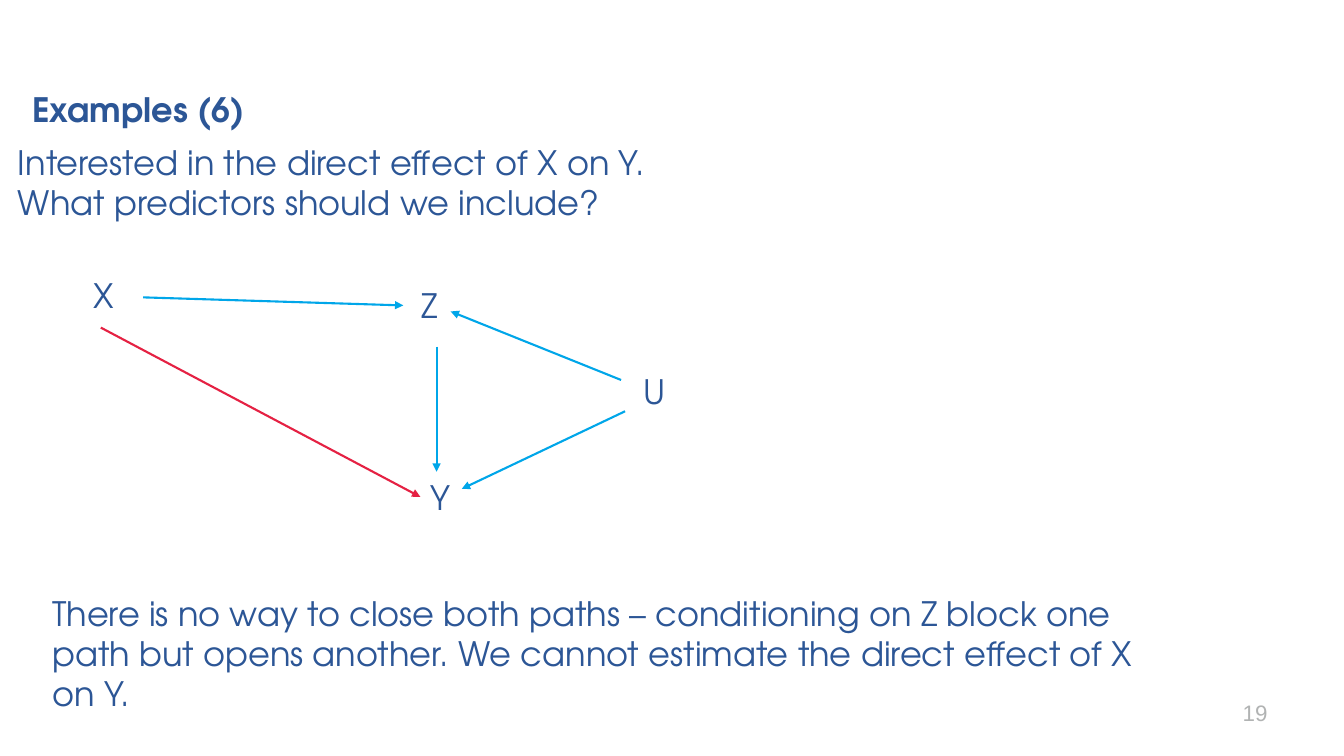
"""Build the slide on the direct effect of X on Y with a causal diagram."""
import lxml.etree
import pptx
import pptx.dml.color
import pptx.enum.shapes
import pptx.enum.text
import pptx.oxml.ns
import pptx.util

NAVY = pptx.dml.color.RGBColor(0x2C, 0x56, 0x96)
BLUE = pptx.dml.color.RGBColor(0x00, 0xA6, 0xE9)
RED = pptx.dml.color.RGBColor(0xE5, 0x21, 0x43)
GREY = pptx.dml.color.RGBColor(0xB1, 0xB3, 0xB3)

TITLE = "Examples (6)"
QUESTION = [
    "Interested in the direct effect of X on Y.",
    "What predictors should we include?",
]
CONCLUSION = (
    "There is no way to close both paths – conditioning on Z block one path "
    "but opens another. We cannot estimate the direct effect of X on Y."
)
PAGE_NUMBER = "19"
NODES = {
    "X": (83, 268, 317, 50),
    "Z": (408, 278, 232, 50),
    "Y": (417, 468, 232, 50),
    "U": (628, 363, 301, 50),
}
ARROWS = [
    ((142, 295), (400, 303), BLUE),
    ((433, 344), (433, 468), BLUE),
    ((100, 325), (417, 493), RED),
    ((616, 377), (447, 309), BLUE),
    ((620, 408), (458, 485), BLUE),
]
EMU_PER_PX = 9144


def px(*lengths):
    return [pptx.util.Emu(length * EMU_PER_PX) for length in lengths]


def add_text(slide, paragraphs, box, size=24, font="TeX Gyre Adventor", color=NAVY,
             bold=False, align=pptx.enum.text.PP_ALIGN.LEFT,
             anchor=pptx.enum.text.MSO_ANCHOR.TOP):
    frame = slide.shapes.add_textbox(*px(*box)).text_frame
    frame.word_wrap = True
    frame.vertical_anchor = anchor
    frame.text = "\n".join(paragraphs)
    for paragraph in frame.paragraphs:
        paragraph.alignment = align
        for run in paragraph.runs:
            run.font.name = font
            run.font.size = pptx.util.Pt(size)
            run.font.bold = bold
            run.font.color.rgb = color


def add_arrow(slide, start, end, color):
    connector = slide.shapes.add_connector(
        pptx.enum.shapes.MSO_CONNECTOR.STRAIGHT, *px(*start, *end))
    connector.line.color.rgb = color
    connector.line.width = pptx.util.Pt(1.5)
    qn = pptx.oxml.ns.qn
    properties = connector.element.spPr
    lxml.etree.SubElement(properties.find(qn("a:ln")), qn("a:tailEnd"), type="triangle")
    lxml.etree.SubElement(properties, qn("a:effectLst"))


def main():
    presentation = pptx.Presentation()
    presentation.slide_width, presentation.slide_height = px(1333, 750)
    slide = presentation.slides.add_slide(presentation.slide_layouts[6])

    add_text(slide, [PAGE_NUMBER], (1117, 687, 150, 40), size=16, font="Arial", color=GREY,
             align=pptx.enum.text.PP_ALIGN.RIGHT, anchor=pptx.enum.text.MSO_ANCHOR.MIDDLE)
    add_text(slide, [TITLE], (22, 83, 604, 50), bold=True)
    add_text(slide, QUESTION, (8, 136, 1233, 91))
    add_text(slide, [CONCLUSION], (42, 583, 1108, 131))
    for name, box in NODES.items():
        add_text(slide, [name], box)
    for start, end, color in ARROWS:
        add_arrow(slide, start, end, color)

    presentation.save("out.pptx")


if __name__ == "__main__":
    main()
